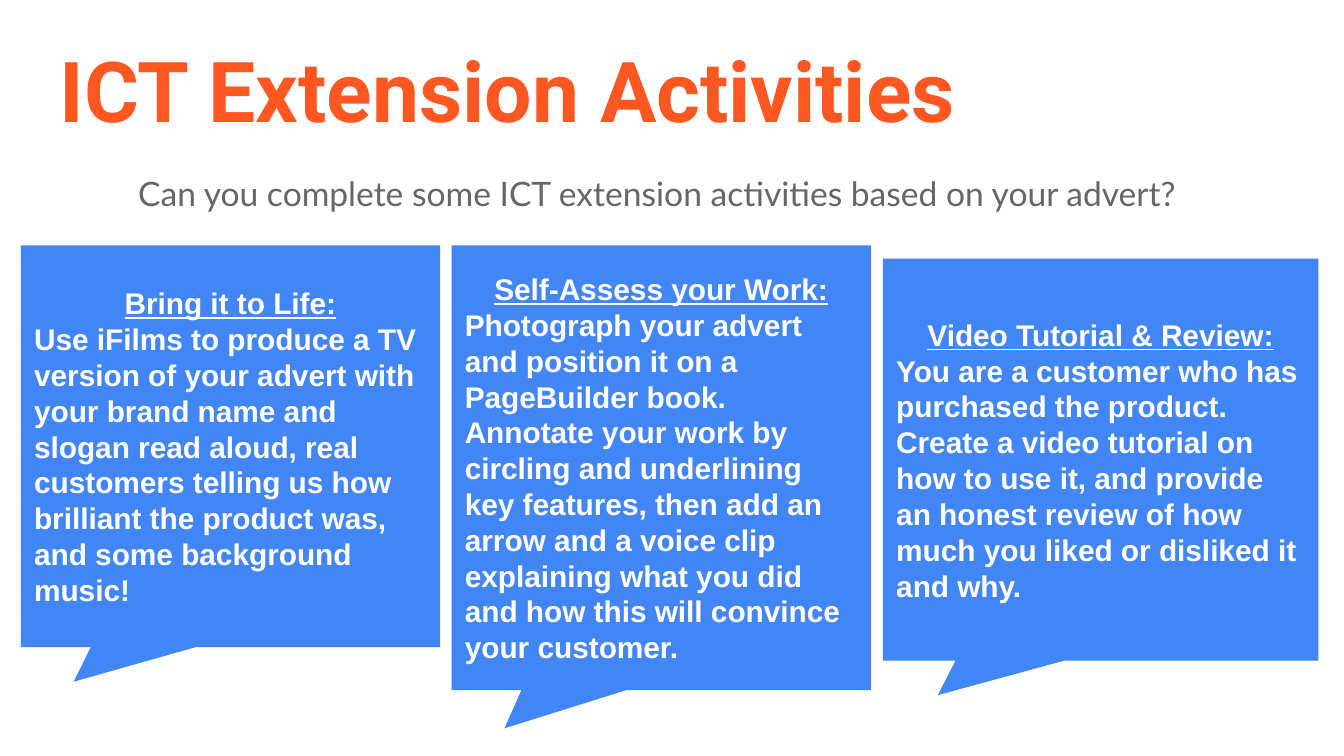
"""Build the ICT extension activities slide with three task callouts."""
from pptx import Presentation
from pptx.dml.color import RGBColor
from pptx.enum.shapes import MSO_SHAPE
from pptx.enum.text import MSO_ANCHOR, PP_ALIGN
from pptx.util import Pt

PX = 4572
INSET = 20 * PX


def set_font(paragraph, name, size, color, bold=False):
    font = paragraph.font
    font.name, font.size, font.bold = name, Pt(size), bold
    font.color.rgb = RGBColor.from_string(color)


def prepare_frame(shape, anchor):
    frame = shape.text_frame
    frame.word_wrap = True
    frame.vertical_anchor = anchor
    frame.margin_left = frame.margin_right = INSET
    frame.margin_top = frame.margin_bottom = INSET
    return frame


prs = Presentation()
prs.slide_width, prs.slide_height = 2000 * PX, 1125 * PX
slide = prs.slides.add_slide(prs.slide_layouts[6])

title_box = slide.shapes.add_textbox(69 * PX, 38 * PX, 1864 * PX, 126 * PX)
title = prepare_frame(title_box, MSO_ANCHOR.TOP).paragraphs[0]
title.text = "ICT Extension Activities"
set_font(title, "Roboto", 45, "FF5722", bold=True)

question_box = slide.shapes.add_textbox(46 * PX, 122 * PX, 1864 * PX, 226 * PX)
question_frame = prepare_frame(question_box, MSO_ANCHOR.BOTTOM)
question_frame.margin_bottom = 31 * PX
question = question_frame.paragraphs[0]
question.text = "Can you complete some ICT extension activities based on your advert?"
question.alignment = PP_ALIGN.CENTER
question.line_spacing = 1.15
set_font(question, "Lato", 18, "666666")

activities = [
    (31, 365, 624, 598, "Bring it to Life:",
     "Use iFilms to produce a TV version of your advert with your brand name "
     "and slogan read aloud, real customers telling us how brilliant the "
     "product was, and some background music!"),
    (672, 365, 624, 662, "Self-Assess your Work:",
     "Photograph your advert and position it on a PageBuilder book. Annotate "
     "your work by circling and underlining key features, then add an arrow "
     "and a voice clip explaining what you did and how this will convince "
     "your customer."),
    (1314, 385, 648, 598, "Video Tutorial & Review:",
     "You are a customer who has purchased the product. Create a video "
     "tutorial on how to use it, and provide an honest review of how much "
     "you liked or disliked it and why."),
]
for left, top, width, height, heading_text, task_text in activities:
    callout = slide.shapes.add_shape(
        MSO_SHAPE.ROUNDED_RECTANGULAR_CALLOUT,
        left * PX, top * PX, width * PX, height * PX)
    for index, value in enumerate((-0.374, 0.586, 0)):
        callout.adjustments[index] = value
    callout.shadow.inherit = False
    callout.fill.solid()
    callout.fill.fore_color.rgb = RGBColor.from_string("4285F4")
    callout.line.fill.background()

    frame = prepare_frame(callout, MSO_ANCHOR.MIDDLE)
    heading, task = frame.paragraphs[0], frame.add_paragraph()
    heading.text, task.text = heading_text, task_text
    heading.alignment, task.alignment = PP_ALIGN.CENTER, PP_ALIGN.LEFT
    for paragraph in (heading, task):
        set_font(paragraph, "Arial", 16, "FFFFFF", bold=True)
    heading.font.underline = True

prs.save("out.pptx")
